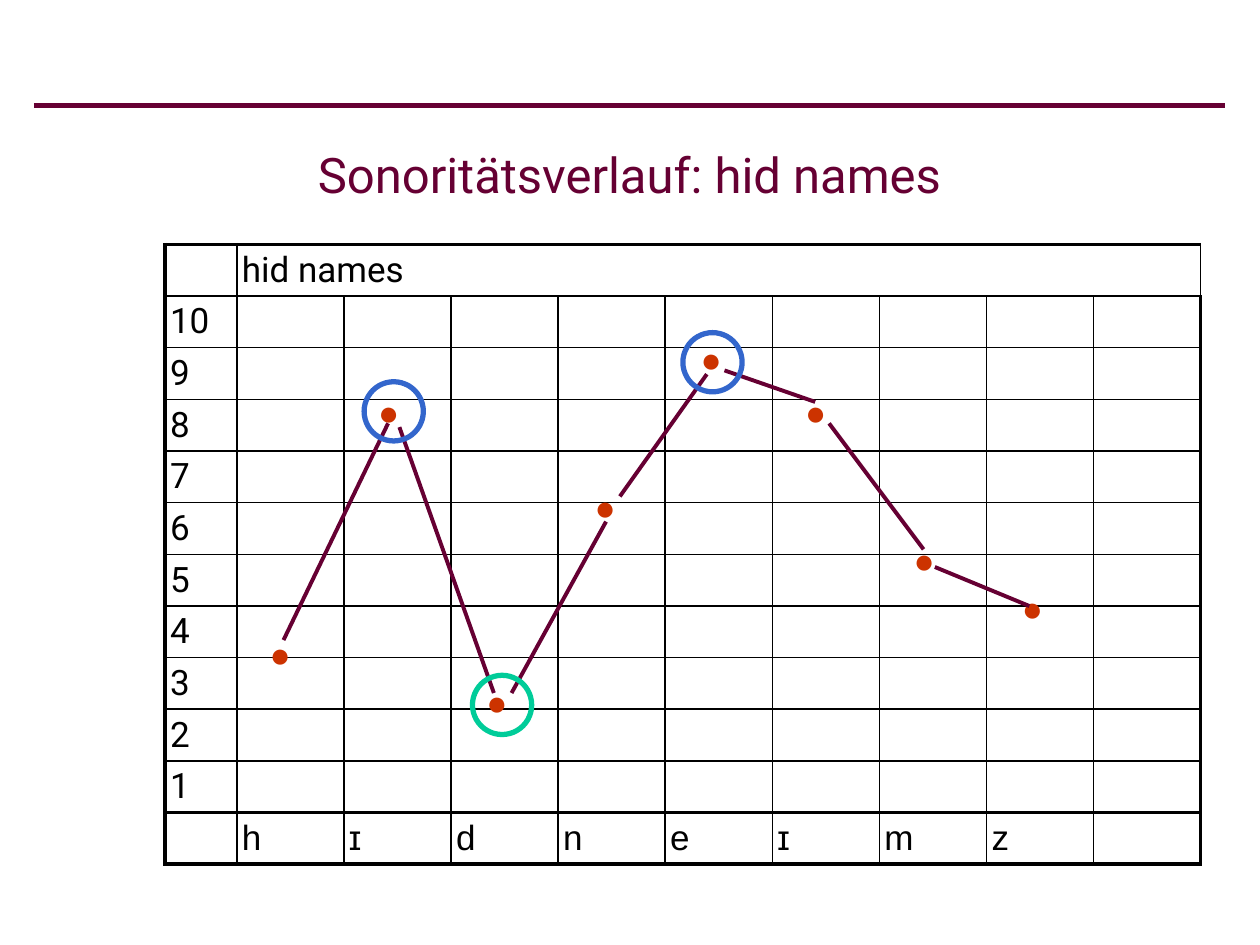
from dataclasses import dataclass

from lxml.etree import SubElement
from pptx import Presentation
from pptx.dml.color import RGBColor
from pptx.enum.shapes import MSO_CONNECTOR, MSO_SHAPE
from pptx.enum.text import MSO_ANCHOR, PP_ALIGN
from pptx.oxml import parse_xml
from pptx.oxml.ns import nsdecls, qn
from pptx.util import Inches, Pt


@dataclass(frozen=True)
class Theme:
    plum: RGBColor = RGBColor(0x66, 0x00, 0x33)
    ink: RGBColor = RGBColor(0, 0, 0)
    dot: RGBColor = RGBColor(0xCC, 0x33, 0x00)
    peak: RGBColor = RGBColor(0x33, 0x66, 0xCC)
    valley: RGBColor = RGBColor(0x00, 0xCC, 0x99)
    sans: str = "Roboto"
    symbol: str = "Arial"
    title_size: Pt = Pt(28)
    body_size: Pt = Pt(20)
    thin: Pt = Pt(1)
    medium: Pt = Pt(2.25)
    thick: Pt = Pt(3)


THEME = Theme()
SOUNDS = ["h", "ɪ", "d", "n", "e", "ɪ", "m", "z"]
LEVELS = range(10, 0, -1)
LABEL_WIDTH, ROW_COUNT, COLUMN_COUNT = 0.57, 12, 10

DOTS = [(0.83, 3.12), (1.69, 1.2), (2.55, 3.5), (3.41, 1.95),
        (4.25, 0.78), (5.08, 1.2), (5.94, 2.37), (6.8, 2.75)]
SEGMENTS = [(0.94, 3.14, 1.77, 1.42), (1.86, 1.45, 2.61, 3.56),
            (2.75, 3.56, 3.5, 2.2), (3.61, 2, 4.3, 1.03),
            (5.16, 1.25, 4.44, 1), (6.02, 2.42, 5.27, 1.42),
            (6.86, 2.87, 6.11, 2.56)]
RINGS = [(1.58, 1.09, THEME.peak), (4.11, 0.7, THEME.peak),
         (2.44, 3.42, THEME.valley)]


def style_font(para, face, size, color):
    para.font.name = face
    para.font.size = size
    para.font.color.rgb = color


def add_line(shapes, start, end, width):
    line = shapes.add_connector(MSO_CONNECTOR.STRAIGHT,
                                *map(Inches, (*start, *end)))
    line.line.color.rgb = THEME.plum
    line.line.width = width
    SubElement(line._element.spPr, qn("a:effectLst"))


def add_heading(page, box, text):
    left, top, width, height = box
    add_line(page.shapes, (left, top), (left + width, top), THEME.thick)
    title = page.shapes.title
    title.left, title.top, title.width, title.height = map(Inches, box)
    title.text_frame.text = text
    title.text_frame.vertical_anchor = MSO_ANCHOR.MIDDLE
    para = title.text_frame.paragraphs[0]
    para.alignment = PP_ALIGN.CENTER
    style_font(para, THEME.sans, THEME.title_size, THEME.plum)


def set_borders(cell, row, column):
    last_row, last_column = ROW_COUNT - 1, COLUMN_COUNT - 1
    heavy_edges = {
        "lnL": column == 0,
        "lnR": column == last_column,
        "lnT": row in (0, last_row),
        "lnB": row in (last_row - 1, last_row),
    }
    properties = cell._tc.get_or_add_tcPr()
    for index, (tag, heavy) in enumerate(heavy_edges.items()):
        width = THEME.medium if heavy else THEME.thin
        properties.insert(index, parse_xml(
            f'<a:{tag} {nsdecls("a")} w="{int(width)}"><a:solidFill>'
            f'<a:srgbClr val="{THEME.ink}"/></a:solidFill></a:{tag}>'))


def add_grid(page, box):
    left, top, width, height = box
    table = page.shapes.add_table(ROW_COUNT, COLUMN_COUNT,
                                  *map(Inches, box)).table
    table.first_row = table.horz_banding = False
    sound_width = (width - LABEL_WIDTH) / (COLUMN_COUNT - 1)
    for index, column in enumerate(table.columns):
        column.width = Inches(sound_width if index else LABEL_WIDTH)
    for row in table.rows:
        row.height = Inches(height / ROW_COUNT)

    texts = {(0, 1): "hid names"}
    texts.update({(row, 0): str(level) for row, level in enumerate(LEVELS, 1)})
    texts.update({(ROW_COUNT - 1, column): sound
                  for column, sound in enumerate(SOUNDS, 1)})
    for row in range(ROW_COUNT):
        for column in range(COLUMN_COUNT):
            cell = table.cell(row, column)
            cell.fill.background()
            set_borders(cell, row, column)
            cell.margin_left = cell.margin_right = Inches(0.04)
            cell.margin_top = cell.margin_bottom = Inches(0.04)
            cell.vertical_anchor = MSO_ANCHOR.MIDDLE
            cell.text = texts.get((row, column), "")
            face = THEME.symbol if row == ROW_COUNT - 1 else THEME.sans
            style_font(cell.text_frame.paragraphs[0], face,
                       THEME.body_size, THEME.ink)
    table.cell(0, 1).merge(table.cell(0, COLUMN_COUNT - 1))


def add_dot(shapes, x, y):
    frame = shapes.add_textbox(*map(Inches, (x, y, 0.28, 0.3))).text_frame
    frame.word_wrap = True
    frame.margin_left = frame.margin_right = 0
    frame.margin_top = frame.margin_bottom = 0
    frame.text = "●"
    para = frame.paragraphs[0]
    para.line_spacing = 0.9
    style_font(para, THEME.symbol, THEME.body_size, THEME.dot)


def add_curve(page, box):
    left, top = box[:2]
    curve = page.shapes.add_group_shape()
    for x, y in DOTS:
        add_dot(curve.shapes, left + x, top + y)
    for x1, y1, x2, y2 in SEGMENTS:
        add_line(curve.shapes, (left + x1, top + y1), (left + x2, top + y2),
                 THEME.medium)


def add_rings(page, box):
    left, top = box[:2]
    for x, y, color in RINGS:
        ring = page.shapes.add_shape(
            MSO_SHAPE.OVAL, *map(Inches, (left + x, top + y, 0.47, 0.47)))
        ring.shadow.inherit = False
        ring.fill.background()
        ring.line.color.rgb = color
        ring.line.width = THEME.thick


def main():
    deck = Presentation()
    deck.slide_width, deck.slide_height = Inches(10), Inches(7.5)
    page = deck.slides.add_slide(deck.slide_layouts[5])
    add_heading(page, (0.27, 0.84, 9.45, 1.08), "Sonoritätsverlauf: hid names")
    chart_box = (1.31, 1.94, 8.22, 4.92)
    add_grid(page, chart_box)
    add_curve(page, chart_box)
    add_rings(page, chart_box)
    deck.save("out.pptx")


if __name__ == "__main__":
    main()
